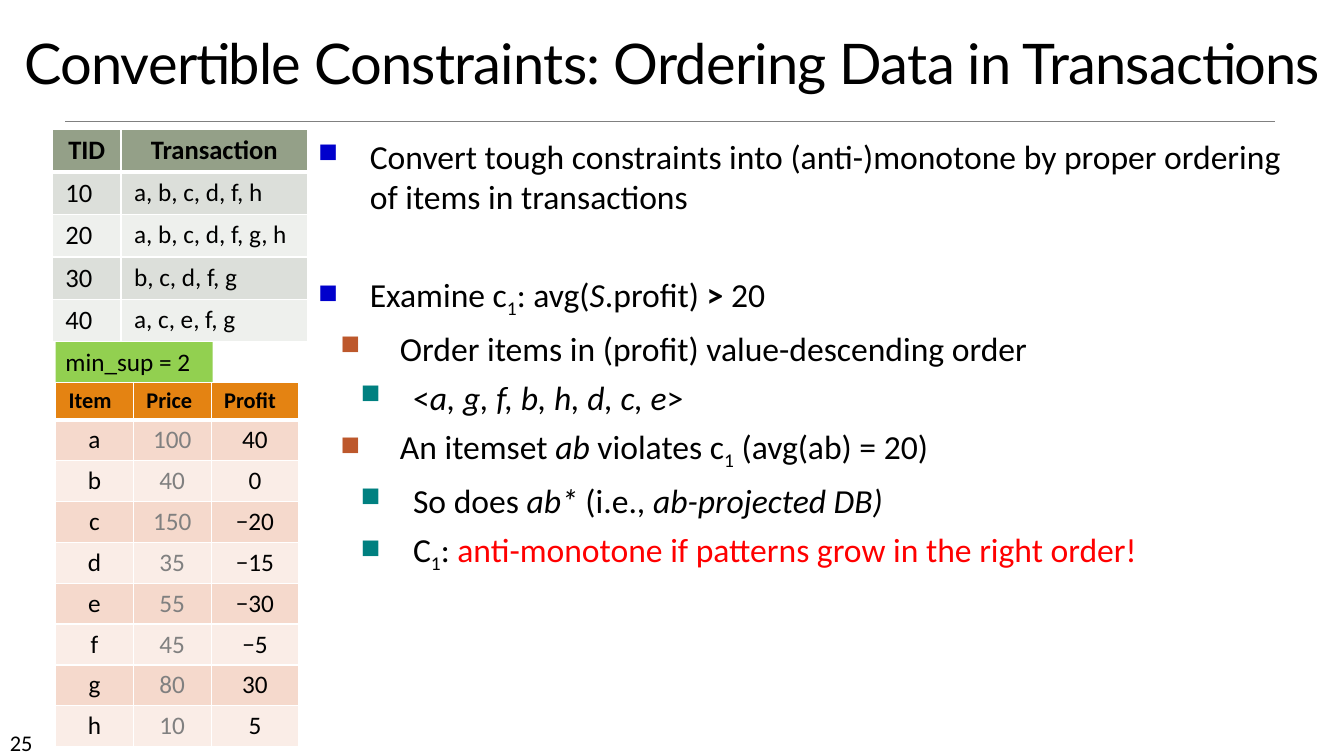
from lxml import etree
from pptx import Presentation
from pptx.dml.color import RGBColor
from pptx.enum.shapes import MSO_CONNECTOR, MSO_SHAPE
from pptx.enum.text import MSO_ANCHOR, MSO_AUTO_SIZE, PP_ALIGN
from pptx.oxml.ns import qn
from pptx.util import Cm, Pt

STRAIGHT = MSO_CONNECTOR.STRAIGHT
RECTANGLE = MSO_SHAPE.RECTANGLE
TOP, BOTTOM = MSO_ANCHOR.TOP, MSO_ANCHOR.BOTTOM
NO_AUTOFIT = MSO_AUTO_SIZE.NONE
LEFT, CENTER = PP_ALIGN.LEFT, PP_ALIGN.CENTER

BLACK = RGBColor(0x00, 0x00, 0x00)
WHITE = RGBColor(0xFF, 0xFF, 0xFF)
GRAY = RGBColor(0x80, 0x80, 0x80)
RED = RGBColor(0xFF, 0x00, 0x00)
BLUE = RGBColor(0x00, 0x00, 0xCC)
RUST = RGBColor(0xBD, 0x58, 0x2C)
TEAL = RGBColor(0x00, 0x80, 0x80)
LIME = RGBColor(0x92, 0xD0, 0x50)
SAGE = RGBColor(0x94, 0xA0, 0x88)
SAGE_BANDS = (RGBColor(0xDC, 0xDF, 0xDA), RGBColor(0xEE, 0xF0, 0xED))
ORANGE = RGBColor(0xE4, 0x83, 0x12)
PEACH_BANDS = (RGBColor(0xF5, 0xD9, 0xCC), RGBColor(0xFA, 0xED, 0xE7))

ITALIC = {"italic": True}
BOLD = {"bold": True}
SUBSCRIPT = {"baseline": -25000}

# Per outline level: left margin and hanging indent in cm, bullet colour
LEVELS = ((1.3, -1.3, BLUE), (2.06, -1.5, RUST), (2.39, -1.32, TEAL))

# Level, space before in points, runs
OUTLINE = (
    (0, 6, [("Convert tough constraints into (anti-)monotone by proper ordering "
             "of items in transactions", {})]),
    (0, 41, [("Examine c", {}), ("1", SUBSCRIPT), (": avg(", {}), ("S", ITALIC),
             (".profit) ", {}), (">", BOLD), (" 20", {})]),
    (1, 6, [("Order items in (profit) value-descending order", {})]),
    (2, 6, [("<", {}), ("a, g, f, b, h, d, c, e", ITALIC), (">", {})]),
    (1, 6, [("An itemset ", {}), ("ab", ITALIC), (" violates c", {}),
            ("1", SUBSCRIPT), (" (avg(ab) = 20)", {})]),
    (2, 6, [("So does ", {}), ("ab*", ITALIC), (" (i.e., ", {}),
            ("ab-projected DB)", ITALIC)]),
    (2, 6, [("C", {}), ("1", SUBSCRIPT), (": ", {}),
            ("anti-monotone if patterns grow in the right order!", {"color": RED})]),
)

TRANSACTIONS = (
    ("TID", "Transaction"),
    ("10", "a, b, c, d, f, h"),
    ("20", "a, b, c, d, f, g, h"),
    ("30", "b, c, d, f, g"),
    ("40", "a, c, e, f, g"),
)

PROFITS = (
    ("Item", "Price", "Profit"),
    ("a", "100", "40"),
    ("b", "40", "0"),
    ("c", "150", "−20"),
    ("d", "35", "−15"),
    ("e", "55", "−30"),
    ("f", "45", "−5"),
    ("g", "80", "30"),
    ("h", "10", "5"),
)


class SlideBuilder:
    def __init__(self, slide, font_name="Calibri"):
        self.slide = slide
        self.font_name = font_name

    def add_runs(self, paragraph, runs, size, **base):
        for text, changes in runs:
            run = paragraph.add_run()
            run.text = text
            style = {"name": self.font_name, "size": Pt(size), "bold": False,
                     "color": BLACK, **base, **changes}
            run.font.color.rgb = style.pop("color")
            for key in ("baseline", "spc"):
                if key in style:
                    run._r.get_or_add_rPr().set(key, str(style.pop(key)))
            for key, value in style.items():
                setattr(run.font, key, value)

    def place(self, shape, left, top, width, height, anchor=TOP):
        box = {"left": left, "top": top, "width": width, "height": height}
        for key, value in box.items():
            setattr(shape, key, Cm(value))
        frame = shape.text_frame
        settings = {"word_wrap": True, "auto_size": NO_AUTOFIT, "vertical_anchor": anchor}
        for key, value in settings.items():
            setattr(frame, key, value)
        return frame

    def title(self, text, *box):
        paragraph = self.place(self.slide.shapes.title, *box, anchor=BOTTOM).paragraphs[0]
        paragraph.alignment = CENTER
        paragraph.line_spacing = 0.85
        self.add_runs(paragraph, [(text, {})], 40, name="Lato", spc=-50)

    def rule(self, left, top, right):
        line = self.slide.shapes.add_connector(
            STRAIGHT, Cm(left), Cm(top), Cm(right), Cm(top))
        line.line.color.rgb = GRAY
        line.line.width = Pt(0.5)
        etree.SubElement(line._element.spPr, qn("a:effectLst"))

    def text(self, text, size, *box):
        frame = self.place(self.slide.shapes.add_textbox(0, 0, 0, 0), *box)
        self.add_runs(frame.paragraphs[0], [(text, {})], size)

    def label(self, text, fill, *box):
        shape = self.slide.shapes.add_shape(RECTANGLE, 0, 0, 0, 0)
        shape.shadow.inherit = False
        shape.fill.solid()
        shape.fill.fore_color.rgb = fill
        shape.line.fill.background()
        paragraph = self.place(shape, *box).paragraphs[0]
        paragraph.alignment = LEFT
        self.add_runs(paragraph, [(text, {})], 18)

    def outline(self, items, *box):
        frame = self.place(self.slide.shapes.add_textbox(0, 0, 0, 0), *box)
        for index, (level, space, runs) in enumerate(items):
            paragraph = frame.add_paragraph() if index else frame.paragraphs[0]
            paragraph.level = level
            paragraph.space_before = Pt(space)
            self.bullet(paragraph, *LEVELS[level])
            self.add_runs(paragraph, runs, 24)

    def bullet(self, paragraph, margin, indent, color):
        properties = paragraph._p.get_or_add_pPr()
        properties.set("marL", str(Cm(margin)))
        properties.set("indent", str(Cm(indent)))
        bullet_color = etree.SubElement(properties, qn("a:buClr"))
        etree.SubElement(bullet_color, qn("a:srgbClr"), val=str(color))
        etree.SubElement(properties, qn("a:buSzPct"), val="80000")
        etree.SubElement(properties, qn("a:buChar"), char="■")

    def table(self, rows, left, top, widths, heights, header_fill, bands, cell_style):
        """Build a banded table; cell_style(row, column) gives alignment, size and colour."""
        header_height, row_height = heights
        frame = self.slide.shapes.add_table(
            len(rows), len(widths), Cm(left), Cm(top), Cm(sum(widths)),
            Cm(header_height + row_height * (len(rows) - 1)))
        table = frame.table
        for column, width in zip(table.columns, widths):
            column.width = Cm(width)
        for r, values in enumerate(rows):
            table.rows[r].height = Cm(row_height if r else header_height)
            for c, value in enumerate(values):
                cell = table.cell(r, c)
                cell.margin_left = cell.margin_right = Cm(0.33)
                self.borders(cell, top=3 if r == 1 else 1, bottom=1 if r else 3)
                cell.fill.solid()
                cell.fill.fore_color.rgb = bands[(r - 1) % 2] if r else header_fill
                alignment, size, color = cell_style(r, c)
                paragraph = cell.text_frame.paragraphs[0]
                paragraph.alignment = alignment
                self.add_runs(paragraph, [(value, {})], size, bold=r == 0, color=color)

    def borders(self, cell, top, bottom):
        properties = cell._tc.get_or_add_tcPr()
        for side, width in (("L", 1), ("R", 1), ("T", top), ("B", bottom)):
            line = etree.SubElement(properties, qn(f"a:ln{side}"), w=str(Pt(width)))
            fill = etree.SubElement(line, qn("a:solidFill"))
            etree.SubElement(fill, qn("a:srgbClr"), val=str(WHITE))


def transaction_style(row, column):
    return (LEFT if row else CENTER, 18 if row and column else 19, BLACK)


def profit_style(row, column):
    if row == 0:
        return LEFT, 16, BLACK
    return CENTER, 18, GRAY if column == 1 else BLACK


def main():
    presentation = Presentation()
    presentation.slide_width = Cm(33.87)
    presentation.slide_height = Cm(19.05)
    builder = SlideBuilder(presentation.slides.add_slide(presentation.slide_layouts[5]))
    builder.rule(1.65, 3.05, 32.13)
    builder.text("25", 16, 0, 18.24, 2.97, 0.76)
    builder.title("Convertible Constraints: Ordering Data in Transactions",
                  -1.12, 1.07, 36.12, 1.47)
    builder.outline(OUTLINE, 7.77, 3.3, 25.48, 14.6)
    builder.label("min_sup = 2", LIME, 1.4, 8.61, 3.96, 1.02)
    builder.table(TRANSACTIONS, 1.32, 3.25, (1.73, 4.7), (1.09, 1.06),
                  SAGE, SAGE_BANDS, transaction_style)
    builder.table(PROFITS, 1.4, 9.63, (1.96, 1.96, 2.21), (0.94, 1.02),
                  ORANGE, PEACH_BANDS, profit_style)
    presentation.save("out.pptx")


if __name__ == "__main__":
    main()
